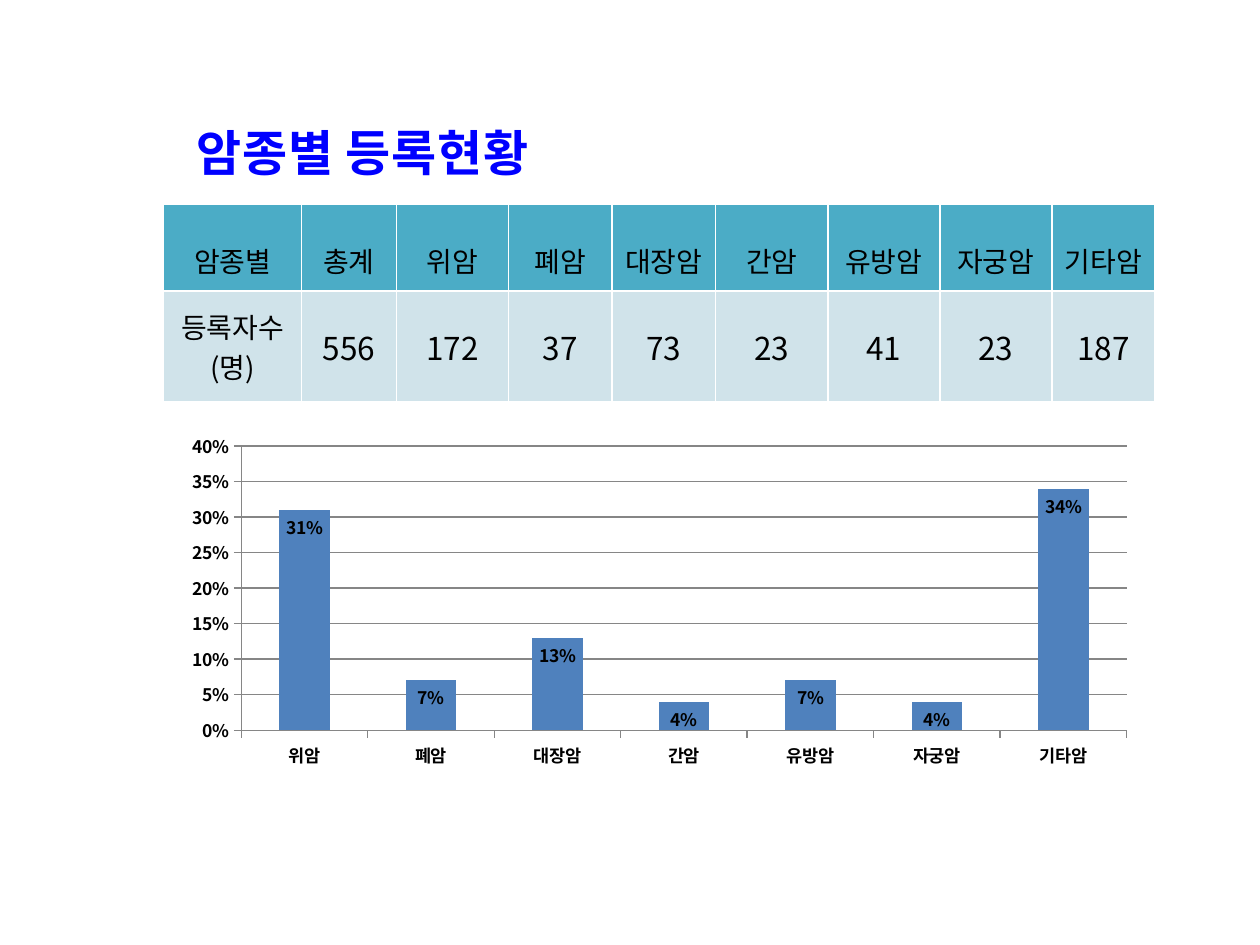
from lxml import etree
from pptx import Presentation, util as u
from pptx.chart.data import CategoryChartData
from pptx.dml.color import RGBColor
from pptx.enum import chart as ch, text
from pptx.oxml import parse_xml
from pptx.oxml.ns import nsdecls, qn

FONT = "Noto Sans CJK KR"
BLUE = RGBColor(0x00, 0x00, 0xFF)
BLACK = RGBColor(0x00, 0x00, 0x00)
WHITE = RGBColor(0xFF, 0xFF, 0xFF)
TEAL = RGBColor(0x4B, 0xAC, 0xC6)
PALE = RGBColor(0xD0, 0xE3, 0xEA)
BAR = RGBColor(0x4F, 0x81, 0xBD)
GRAY = RGBColor(0x86, 0x86, 0x86)


class Builder:
    """Style and drawing methods for one slide."""

    def __init__(self, slide):
        self.s = slide

    def style(self, font, size, color=BLACK, bold=False):
        font.size, font.bold = u.Pt(size), bold
        font.color.rgb = color
        font.name = FONT
        etree.SubElement(font._rPr, qn("a:ea")).set("typeface", FONT)

    def run(self, p, words, size, color=BLACK, bold=False):
        r = p.add_run()
        r.text = words
        self.style(r.font, size, color, bold)
        return r

    def title(self, words, x, y, w, h):
        tf = self.s.shapes.add_textbox(u.Cm(x), u.Cm(y), u.Cm(w), u.Cm(h)).text_frame
        tf.word_wrap = True
        tf.margin_top = tf.margin_bottom = 0
        tf.vertical_anchor = text.MSO_ANCHOR.MIDDLE
        r = self.run(tf.paragraphs[0], words, 28, BLUE, True)
        r.font._rPr.set("spc", "50")

    def cell(self, cell, words, size, fill, spacing=None):
        cell.margin_left = cell.margin_right = u.Cm(0.18)
        cell.margin_top = cell.margin_bottom = u.Cm(0.05)
        cell.vertical_anchor = text.MSO_ANCHOR.MIDDLE
        tf = cell.text_frame
        for i, line in enumerate(words.split("\n")):
            p = tf.add_paragraph() if i else tf.paragraphs[0]
            p.alignment = text.PP_ALIGN.CENTER
            if spacing:
                p.line_spacing = spacing
            self.run(p, line, size)
        # Borders come before the fill in the cell properties
        tcPr = cell._tc.get_or_add_tcPr()
        for side in ("lnL", "lnR", "lnT", "lnB"):
            tcPr.append(parse_xml(
                f'<a:{side} {nsdecls("a")} w="12700"><a:solidFill>'
                f'<a:srgbClr val="{WHITE}"/></a:solidFill></a:{side}>'))
        cell.fill.solid()
        cell.fill.fore_color.rgb = fill

    def table(self, heads, values, widths, heights, x, y):
        t = self.s.shapes.add_table(2, len(heads), u.Cm(x), u.Cm(y),
                                    u.Cm(sum(widths)), u.Cm(sum(heights))).table
        t.first_row = t.horz_banding = False
        for col, w in zip(t.columns, widths):
            col.width = u.Cm(w)
        for row, h in zip(t.rows, heights):
            row.height = u.Cm(h)
        for i, (head, value) in enumerate(zip(heads, values)):
            self.cell(t.cell(0, i), head, 16, TEAL, 1.6)
            self.cell(t.cell(1, i), value, 18 if i else 16, PALE)

    def chart(self, cats, shares, x, y, w, h):
        data = CategoryChartData(number_format="0%")
        data.categories = cats
        data.add_series("Series 1", shares)
        c = self.s.shapes.add_chart(ch.XL_CHART_TYPE.COLUMN_STACKED, u.Cm(x), u.Cm(y),
                                    u.Cm(w), u.Cm(h), data).chart
        c.has_legend = c.has_title = False
        self.style(c.font, 10)

        # Axes
        for axis in (c.category_axis, c.value_axis):
            axis.major_tick_mark = ch.XL_TICK_MARK.OUTSIDE
            axis.minor_tick_mark = ch.XL_TICK_MARK.NONE
            axis.format.line.color.rgb = GRAY
            self.style(axis.tick_labels.font, 10, BLACK, True)
        val = c.value_axis
        val.minimum_scale, val.maximum_scale, val.major_unit = 0, 0.4, 0.05
        val.has_major_gridlines = True
        val.major_gridlines.format.line.color.rgb = GRAY
        val.tick_labels.number_format = "0%"
        val.tick_labels.number_format_is_linked = False

        # Bars and labels
        plot = c.plots[0]
        plot.gap_width, plot.overlap, plot.vary_by_categories = 150, 100, False
        bars = plot.series[0].format.fill
        bars.solid()
        bars.fore_color.rgb = BAR
        plot.has_data_labels = True
        labels = plot.data_labels
        labels.show_value = True
        labels.number_format, labels.number_format_is_linked = "0%", False
        labels.position = ch.XL_LABEL_POSITION.INSIDE_END
        self.style(labels.font, 10, BLACK, True)

        # Inner plot area as fractions of the chart
        area = c._chartSpace.chart.plotArea
        for old in area.findall(qn("c:layout")):
            area.remove(old)
        box = "".join(f'<c:{k} val="{v}"/>' for k, v in (
            ("layoutTarget", "inner"), ("xMode", "edge"), ("yMode", "edge"),
            ("x", 0.06), ("y", 0.03), ("w", 0.92), ("h", 0.8)))
        area.insert(0, parse_xml(f'<c:layout {nsdecls("c")}><c:manualLayout>{box}'
                                 '</c:manualLayout></c:layout>'))


def main():
    prs = Presentation()
    prs.slide_width, prs.slide_height = u.Cm(25.4), u.Cm(19.05)
    b = Builder(prs.slides.add_slide(prs.slide_layouts[6]))

    cancers = ["위암", "폐암", "대장암", "간암", "유방암", "자궁암", "기타암"]
    counts = ["172", "37", "73", "23", "41", "23", "187"]
    shares = [0.31, 0.07, 0.13, 0.04, 0.07, 0.04, 0.34]

    b.title("암종별 등록현황", 3.71, 2.34, 20, 1.45)
    b.table(["암종별", "총계"] + cancers, ["등록자수\n(명)", "556"] + counts,
            [2.78, 1.91, 2.26, 2.09, 2.09, 2.26, 2.26, 2.26, 2.08],
            [1.75, 2.23], 3.3, 4.12)
    b.chart(cancers, shares, 3.7, 8.74, 19.4, 7.2)
    prs.save("out.pptx")


if __name__ == "__main__":
    main()
